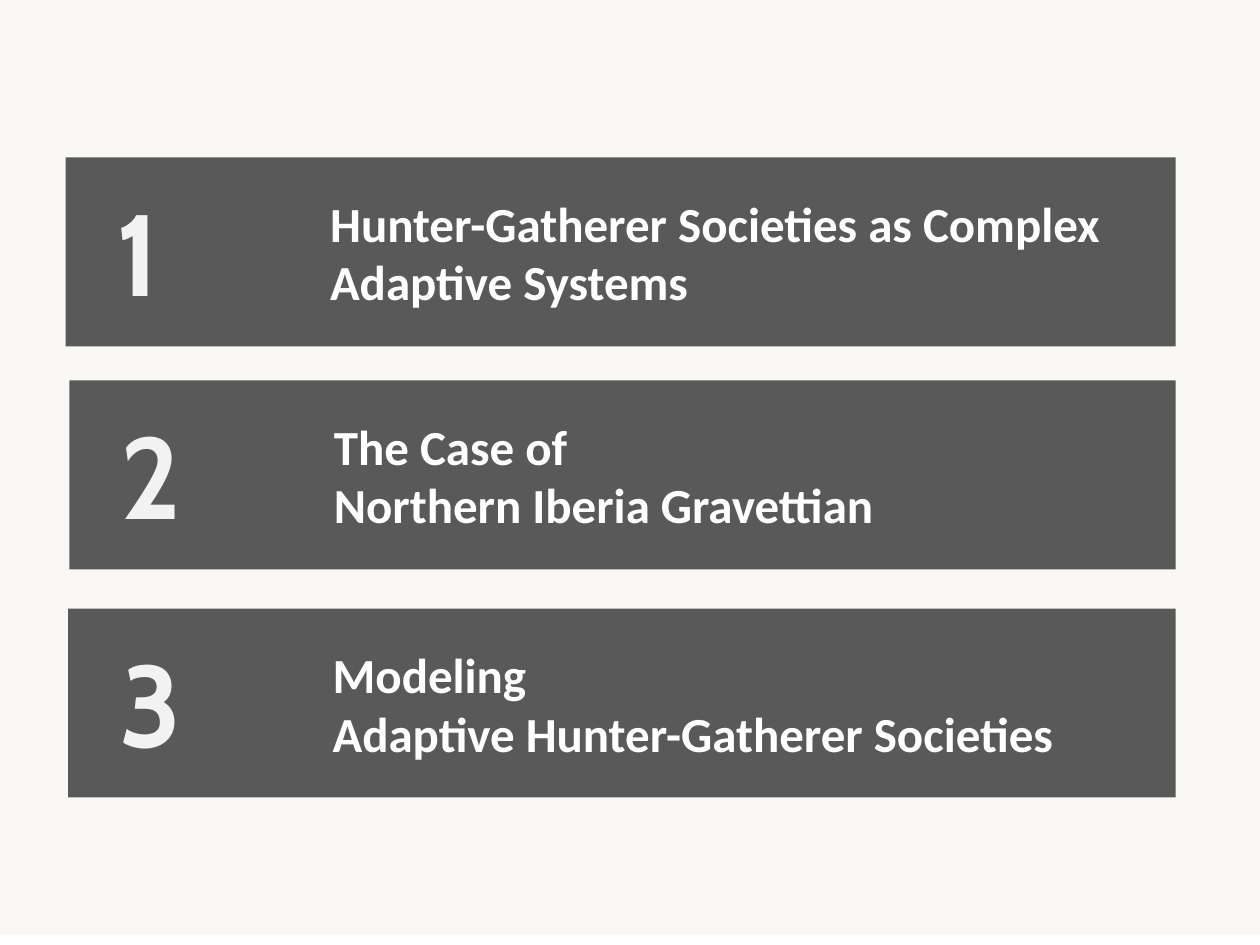
import pptx
import pptx.dml.color
import pptx.enum.shapes
import pptx.enum.text
import pptx.util
from pptx.util import Inches

PAPER = pptx.dml.color.RGBColor(0xF9, 0xF8, 0xF5)
BAR_GRAY = pptx.dml.color.RGBColor(0x59, 0x59, 0x59)
NUMBER_GRAY = pptx.dml.color.RGBColor(0xF2, 0xF2, 0xF2)
WHITE = pptx.dml.color.RGBColor(0xFF, 0xFF, 0xFF)

BAR_RIGHT = 9.33
SECTIONS = [
    (0.52, 1.25, "Hunter-Gatherer Societies as Complex\vAdaptive Systems"),
    (0.55, 3.02, "The Case of\vNorthern Iberia Gravettian"),
    (0.54, 4.83, "Modeling\vAdaptive Hunter-Gatherer Societies"),
]


def add_rectangle(slide, left, top, width, height, color):
    """Add a plain filled rectangle without outline or shadow."""
    shape = slide.shapes.add_shape(
        pptx.enum.shapes.MSO_SHAPE.RECTANGLE,
        Inches(left), Inches(top), Inches(width), Inches(height))
    shape.shadow.inherit = False
    shape.fill.solid()
    shape.fill.fore_color.rgb = color
    shape.line.fill.background()
    return shape


def write_text(shape, text, font_name, size, color):
    """Write one bold, left-aligned paragraph into a shape."""
    shape.text_frame.word_wrap = True
    paragraph = shape.text_frame.paragraphs[0]
    paragraph.text = text
    paragraph.alignment = pptx.enum.text.PP_ALIGN.LEFT
    paragraph.font.name = font_name
    paragraph.font.size = pptx.util.Pt(size)
    paragraph.font.bold = True
    paragraph.font.color.rgb = color


def add_section(slide, number, left, top, title):
    """Add a bar with its section title and large number."""
    bar = add_rectangle(slide, left, top, BAR_RIGHT - left, 1.5, BAR_GRAY)
    bar.text_frame.margin_left = Inches(2.1)
    bar.text_frame.vertical_anchor = pptx.enum.text.MSO_ANCHOR.MIDDLE
    write_text(bar, title, "Calibri", 28, WHITE)
    number_box = slide.shapes.add_textbox(
        Inches(left + 0.31), Inches(top + 0.14), Inches(1.02), Inches(1.21))
    write_text(number_box, str(number), "Cabin", 66, NUMBER_GRAY)


def main():
    """Build the outline slide and save it."""
    presentation = pptx.Presentation()
    presentation.slide_width = Inches(10)
    presentation.slide_height = Inches(7.5)
    slide = presentation.slides.add_slide(presentation.slide_layouts[6])
    add_rectangle(slide, 0, -0.11, 10, 7.53, PAPER)
    for number, (left, top, title) in enumerate(SECTIONS, start=1):
        add_section(slide, number, left, top, title)
    presentation.save("out.pptx")


if __name__ == "__main__":
    main()
